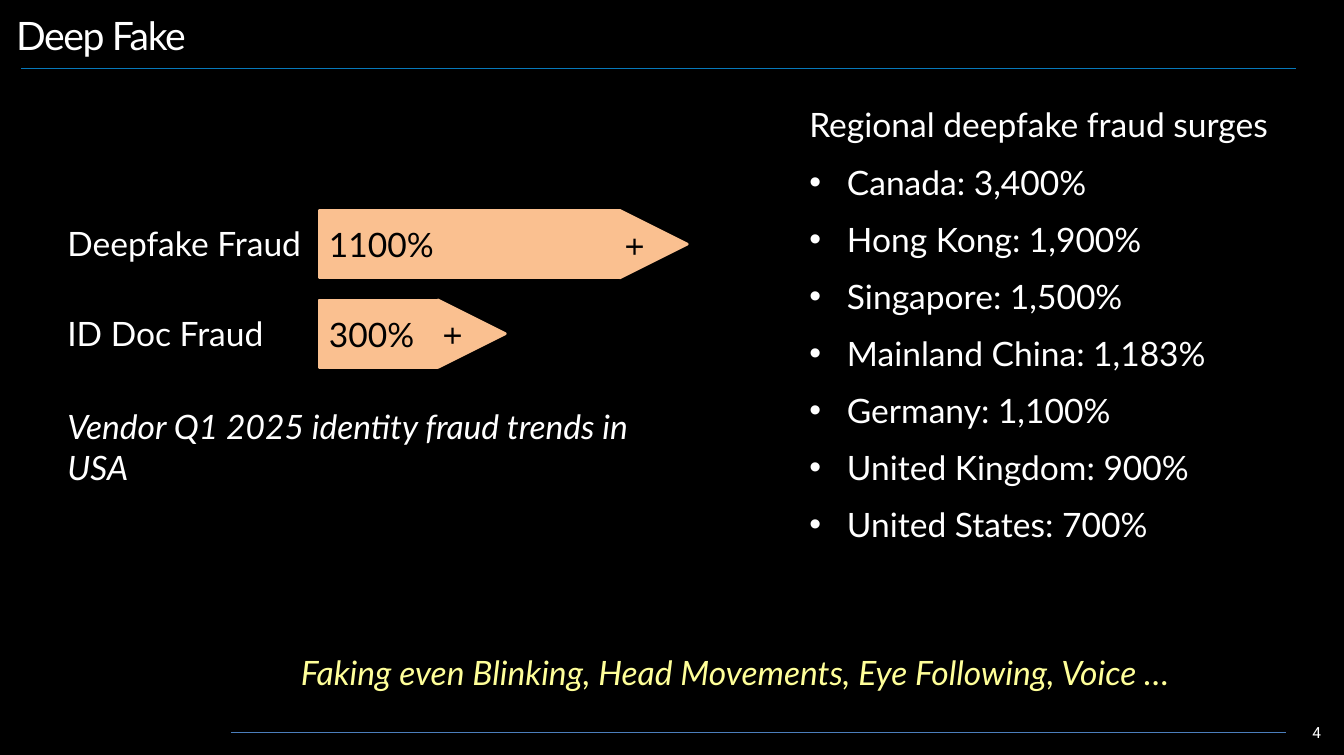
from dataclasses import dataclass

from lxml import etree
from pptx import Presentation
from pptx.dml.color import RGBColor
from pptx.enum.shapes import MSO_CONNECTOR, MSO_SHAPE
from pptx.enum.text import MSO_ANCHOR, PP_ALIGN
from pptx.oxml.ns import qn
from pptx.util import Cm, Pt

STRAIGHT = MSO_CONNECTOR.STRAIGHT
RECTANGLE = MSO_SHAPE.RECTANGLE
TRIANGLE = MSO_SHAPE.ISOSCELES_TRIANGLE
MIDDLE = MSO_ANCHOR.MIDDLE
LEFT, CENTER, RIGHT = PP_ALIGN.LEFT, PP_ALIGN.CENTER, PP_ALIGN.RIGHT


@dataclass(frozen=True)
class Theme:
    font: str = "Lato"
    number_font: str = "Roboto"
    title_size: int = 28
    body_size: int = 24
    number_size: int = 11
    background: str = "000000"
    text: str = "FFFFFF"
    bar: str = "FAC090"
    bar_text: str = "000000"
    accent: str = "FFFF99"
    title_rule: str = "0779BA"
    footer_rule: str = "4B7EBC"


class SlideBuilder:
    def __init__(self, deck, theme):
        self.theme = theme
        self.page = deck.slides.add_slide(deck.slide_layouts[5])
        fill = self.page.background.fill
        fill.solid()
        fill.fore_color.rgb = RGBColor.from_string(theme.background)

    def style(self, para, color, size=None, font=None, italic=None):
        para.font.name = font or self.theme.font
        para.font.size = Pt(size or self.theme.body_size)
        para.font.color.rgb = RGBColor.from_string(color)
        para.font.italic = italic

    def rule(self, left, right, top, color):
        line = self.page.shapes.add_connector(
            STRAIGHT, Cm(left), Cm(top), Cm(right), Cm(top))
        line.line.color.rgb = RGBColor.from_string(color)
        line.line.width = Pt(0.75)
        etree.SubElement(line._element.spPr, qn("a:effectLst"))

    def title(self, text, left, top, width, height):
        title = self.page.shapes.title
        title.left, title.top = Cm(left), Cm(top)
        title.width, title.height = Cm(width), Cm(height)
        frame = title.text_frame
        frame.vertical_anchor = MIDDLE
        para = frame.paragraphs[0]
        para.alignment = LEFT
        span = para.add_run()
        span.text = text
        span.font._element.set("spc", "-100")
        self.style(para, self.theme.text, self.theme.title_size)

    def text(self, text, left, top, width, height, color=None, italic=None,
             wrap=False):
        box = self.page.shapes.add_textbox(
            Cm(left), Cm(top), Cm(width), Cm(height))
        box.text_frame.word_wrap = wrap
        para = box.text_frame.paragraphs[0]
        para.text = text
        self.style(para, color or self.theme.text, italic=italic)
        return box.text_frame

    def bullets(self, heading, items, left, top, width, height):
        frame = self.text(heading, left, top, width, height)
        frame.paragraphs[0].space_after = Pt(6)
        for item in items:
            para = frame.add_paragraph()
            para.text = item
            para.space_before = para.space_after = Pt(6)
            properties = para._p.get_or_add_pPr()
            properties.set("marL", str(Cm(0.95)))
            properties.set("indent", str(-Cm(0.95)))
            etree.SubElement(properties, qn("a:buFont")).set("typeface", "Arial")
            etree.SubElement(properties, qn("a:buChar")).set("char", "•")
            self.style(para, self.theme.text)

    def block(self, kind, text, left, top, width, height, alignment, rotation=0):
        shape = self.page.shapes.add_shape(
            kind, Cm(left), Cm(top), Cm(width), Cm(height))
        shape.rotation = rotation
        shape.shadow.inherit = False
        shape.fill.solid()
        shape.fill.fore_color.rgb = RGBColor.from_string(self.theme.bar)
        shape.line.color.rgb = RGBColor.from_string(self.theme.bar)
        shape.line.width = Pt(2)
        shape.text_frame.vertical_anchor = MIDDLE
        para = shape.text_frame.paragraphs[0]
        para.text = text
        para.alignment = alignment
        self.style(para, self.theme.bar_text)

    def arrow_bar(self, label, value, top, label_width, bar_width):
        bar_left, size = 8.05, 1.7
        self.text(label, 1.45, top + 0.2, label_width, 1.27)
        self.block(RECTANGLE, value, bar_left, top, bar_width, size, LEFT)
        self.block(TRIANGLE, "+", bar_left + bar_width, top, size, size, CENTER, 90)

    def page_number(self, number, left, top, width, height):
        frame = self.text(number, left, top, width, height, wrap=True)
        frame.vertical_anchor = MIDDLE
        frame.margin_left = frame.margin_right = Cm(0.3)
        frame.margin_top = frame.margin_bottom = Cm(0.15)
        para = frame.paragraphs[0]
        para.alignment = RIGHT
        self.style(para, self.theme.text, self.theme.number_size,
                   self.theme.number_font)


def main():
    deck = Presentation()
    deck.slide_width, deck.slide_height = Cm(33.91), Cm(19.05)
    theme = Theme()
    slide = SlideBuilder(deck, theme)

    slide.rule(5.84, 32.44, 18.49, theme.footer_rule)
    slide.rule(0.53, 32.69, 1.73, theme.title_rule)
    slide.title("Deep Fake", 0.15, 0.03, 32.79, 1.7)

    frauds = [("Deepfake Fraud", "1100%", 6.43, 7.59),
              ("ID Doc Fraud", "300%", 5.46, 3)]
    for row, (label, value, label_width, bar_width) in enumerate(frauds):
        slide.arrow_bar(label, value, 5.31 + row * 2.26, label_width, bar_width)
    slide.text("Vendor Q1 2025 identity fraud trends in USA",
               1.45, 10.13, 15.57, 2.31, italic=True, wrap=True)

    surges = ["Canada: 3,400%", "Hong Kong: 1,900%", "Singapore: 1,500%",
              "Mainland China: 1,183%", "Germany: 1,100%",
              "United Kingdom: 900%", "United States: 700%"]
    slide.bullets("Regional deepfake fraud surges", surges,
                  20.17, 2.51, 12.37, 11.46)
    slide.text("Faking even Blinking, Head Movements, Eye Following, Voice …",
               7.34, 16.33, 22.5, 1.27, theme.accent, italic=True)
    slide.page_number("4", 25.73, 17.96, 7.9, 1.04)
    deck.save("out.pptx")


if __name__ == "__main__":
    main()
